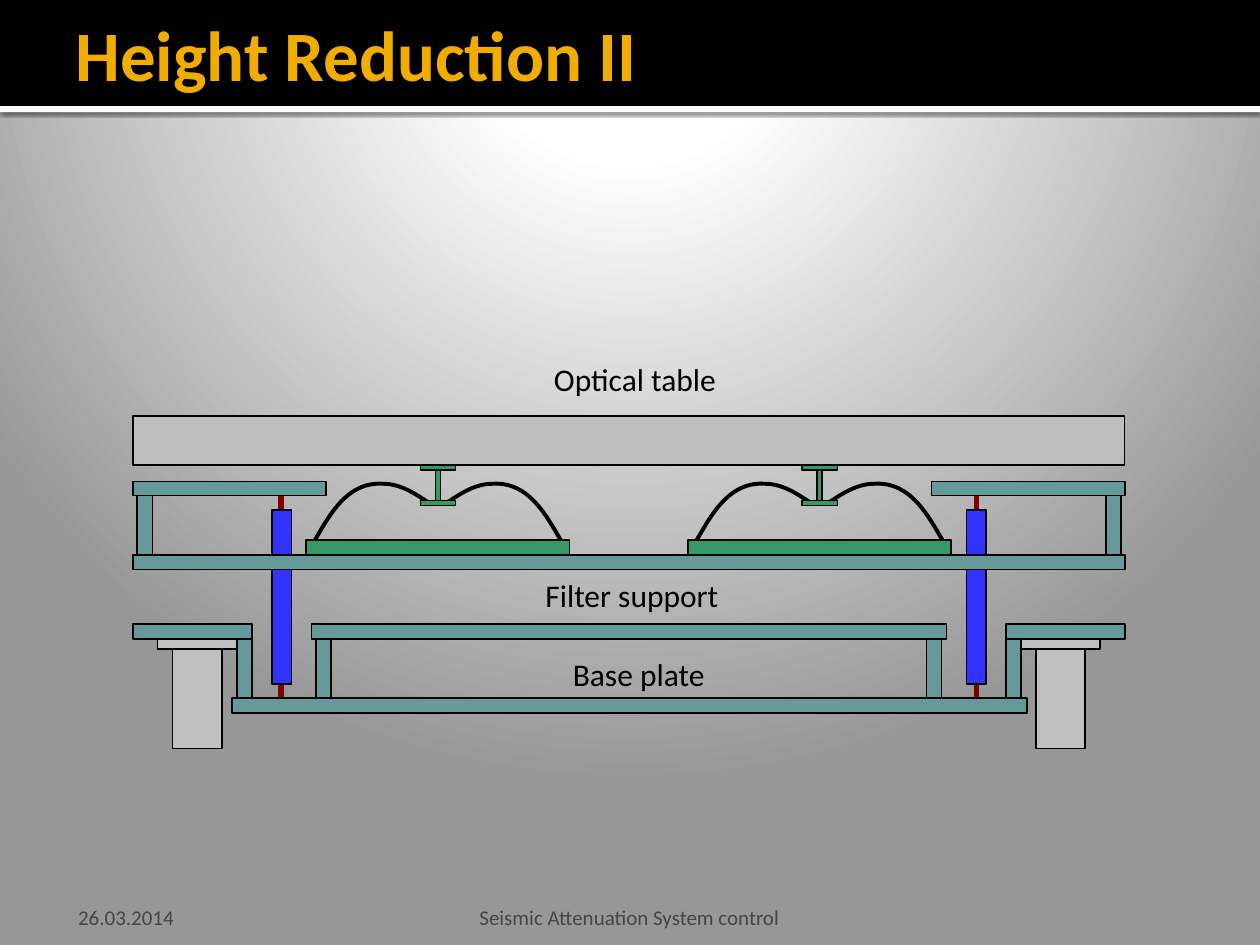
from lxml import etree
from pptx import Presentation
from pptx import util as u
from pptx.dml.color import RGBColor
from pptx.enum import shapes, text
from pptx.oxml import parse_xml
from pptx.oxml.ns import nsdecls, qn

BLACK = RGBColor(0x00, 0x00, 0x00)
WHITE = RGBColor(0xFF, 0xFF, 0xFF)
AMBER = RGBColor(0xF0, 0xAD, 0x00)
EDGE_GREY = RGBColor(0x97, 0x97, 0x97)
FOOTER_GREY = RGBColor(0x45, 0x45, 0x45)
PILLAR_GREY = RGBColor(0xC0, 0xC0, 0xC0)
TABLE_GREY = RGBColor(0xBF, 0xBF, 0xBF)
TEAL = RGBColor(0x66, 0x99, 0x99)
GREEN = RGBColor(0x33, 0x99, 0x66)
BLUE = RGBColor(0x33, 0x33, 0xFF)
DARK_RED = RGBColor(0x80, 0x00, 0x00)

presentation = Presentation()
presentation.slide_width = u.Inches(10)
presentation.slide_height = u.Inches(7.5)
COLUMN = presentation.slide_width // 1000
ROW = presentation.slide_height // 750
slide = presentation.slides.add_slide(presentation.slide_layouts[6])


def add_box(left, top, width, height, fill, line_width=1):
    shape = slide.shapes.add_shape(
        shapes.MSO_SHAPE.RECTANGLE,
        int(left * COLUMN), int(top * ROW), int(width * COLUMN), int(height * ROW))
    shape.shadow.inherit = False
    shape.fill.solid()
    shape.fill.fore_color.rgb = fill
    if line_width:
        shape.line.color.rgb = BLACK
        shape.line.width = u.Pt(line_width)
    else:
        shape.line.fill.background()
    return shape


def add_label(words, left, top, width, height, size, color, align, anchor, insets, bold=False):
    shape = slide.shapes.add_textbox(
        left * COLUMN, top * ROW, width * COLUMN, height * ROW)
    frame = shape.text_frame
    frame_format = {"word_wrap": True, "vertical_anchor": anchor}
    sides = ("margin_left", "margin_top", "margin_right", "margin_bottom")
    frame_format.update(zip(sides, (u.Inches(inset) for inset in insets)))
    for name, value in frame_format.items():
        setattr(frame, name, value)
    paragraph = frame.paragraphs[0]
    paragraph.alignment = align
    run = paragraph.add_run()
    run.text = words
    for name, value in {"name": "Calibri", "size": u.Pt(size), "bold": bold}.items():
        setattr(run.font, name, value)
    run.font.color.rgb = color


stops = "".join(
    f'<a:gs pos="{share * 1000}"><a:srgbClr val="{color}"/></a:gs>'
    for share, color in ((0, WHITE), (12, WHITE), (20, WHITE), (100, EDGE_GREY)))
slide.element.cSld.insert(0, parse_xml(
    f'<p:bg {nsdecls("p", "a")}><p:bgPr><a:gradFill rotWithShape="1">'
    f'<a:gsLst>{stops}</a:gsLst><a:path path="circle">'
    '<a:fillToRect l="10000" t="-25000" r="10000" b="125000"/></a:path>'
    '</a:gradFill><a:effectLst/></p:bgPr></p:bg>'))

rule = add_box(0, 84, 1000, 5, WHITE, 0)
effects = rule._element.spPr.find(qn("a:effectLst"))
effects.append(parse_xml(
    f'<a:outerShdw {nsdecls("a")} blurRad="{u.Pt(2.5)}" dist="{u.Pt(0.8)}" dir="5400000" '
    'algn="tl" rotWithShape="0"><a:srgbClr val="000000"><a:alpha val="60000"/>'
    '</a:srgbClr></a:outerShdw>'))
add_box(0, 0, 1000, 84, BLACK, 0)
add_label("Height Reduction II", 50, 9, 900, 67, 40.5, AMBER, text.PP_ALIGN.LEFT,
          text.MSO_ANCHOR.MIDDLE, (0.1, 0.05, 0.05, 0.05), True)

for x, foot in ((223, 539), (775, 535)):
    for start, end in ((554, foot), (409, 393)):
        wire = slide.shapes.add_connector(
            shapes.MSO_CONNECTOR.STRAIGHT, x * COLUMN, start * ROW, x * COLUMN, end * ROW)
        wire.line.color.rgb = DARK_RED
        wire.line.width = u.Pt(3)
        etree.SubElement(wire._element.spPr, qn("a:effectLst"))

for lefts, top, width, height, fill in (
        ((125, 810), 507, 63, 8, PILLAR_GREY),
        ((137, 822), 515, 39, 79, PILLAR_GREY),
        ((105.3,), 330, 787.3, 39.3, TABLE_GREY),
        ((215.7, 767), 405, 15.7, 138, BLUE)):
    for left in lefts:
        add_box(left, top, width, height, fill)

blade_curve = ((-99.5, 432), (-87.5, 412), (-73.5, 382), (-43.5, 384),
               (-28.5, 384), (-16.5, 393), (-5.5, 400))
for center in (347.5, 650.5):
    for side in (1, -1):
        points = [(int((center + side * x) * COLUMN), y * ROW) for x, y in blade_curve]
        builder = slide.shapes.build_freeform(*points[0])
        builder.add_line_segments(points[1:], close=False)
        blade = builder.convert_to_shape()
        segments = list(blade._element.iter(qn("a:lnTo")))
        for first in range(0, len(segments), 3):
            bezier = etree.Element(qn("a:cubicBezTo"))
            segments[first].addprevious(bezier)
            for segment in segments[first:first + 3]:
                bezier.append(segment[0])
                segment.getparent().remove(segment)
        blade.shadow.inherit = False
        blade.fill.background()
        blade.line.color.rgb = BLACK
        blade.line.width = u.Pt(2.25)
    for width, top, height, line_width in (
            (4, 373, 28, 0.75), (28, 369, 4, 0.75), (28, 397, 4, 0.75), (209, 428.5, 12, 1)):
        add_box(center - width / 2, top, width, height, GREEN, line_width)

for lefts, top, width, height in (
        ((105.3,), 440.3, 787.6, 11.7),
        ((109, 878), 393, 12, 47.3),
        ((105.3, 739.3), 382.2, 153.6, 11),
        ((105.3, 798.3), 495, 94.5, 12),
        ((247.3,), 495, 504, 12),
        ((188, 798.3), 507, 12, 47),
        ((251, 735.3), 507, 12, 47),
        ((184,), 554.3, 631, 11.4)):
    for left in lefts:
        add_box(left, top, width, height, TEAL)

for words, left, top, width in (
        ("Optical table", 419, 281, 159),
        ("Filter support", 412, 452, 168),
        ("Base plate", 431, 515, 138)):
    add_label(words, left, top, width, 40, 18, BLACK, text.PP_ALIGN.RIGHT,
              text.MSO_ANCHOR.TOP, (0.1, 0.05, 0.1, 0.05))

for words, left, width, align, inset in (
        ("26.03.2014", 50, 111, text.PP_ALIGN.LEFT, 0.12),
        ("Seismic Attenuation System control", 169, 661, text.PP_ALIGN.CENTER, 0.05)):
    add_label(words, left, 708, width, 30, 12, FOOTER_GREY, align,
              text.MSO_ANCHOR.BOTTOM, (inset, 0.05, 0.05, 0))

presentation.save("out.pptx")
